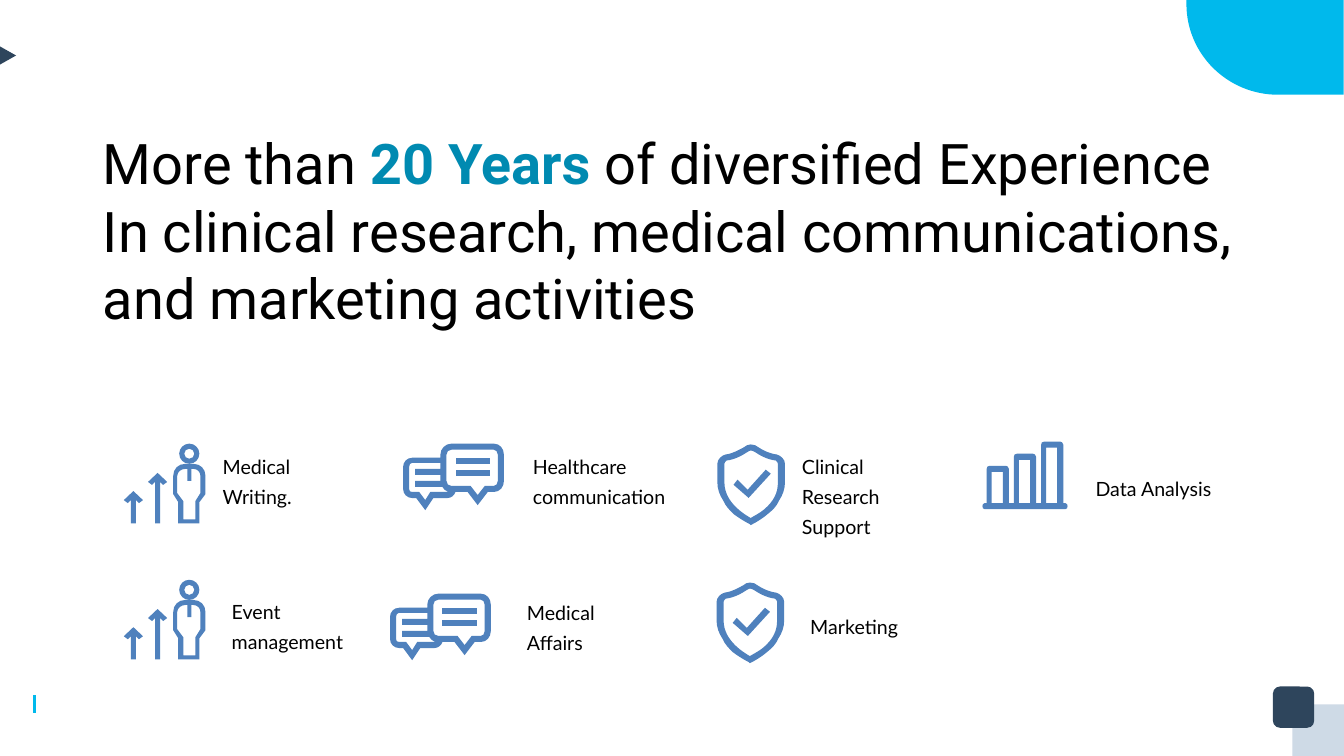
from dataclasses import dataclass

from lxml import etree
from pptx import Presentation
from pptx.dml.color import RGBColor
from pptx.enum.shapes import MSO_CONNECTOR, MSO_SHAPE
from pptx.enum.text import MSO_ANCHOR, MSO_AUTO_SIZE, PP_ALIGN
from pptx.oxml.ns import qn
from pptx.util import Cm, Pt

LEFT = PP_ALIGN.LEFT
TOP = MSO_ANCHOR.TOP
NO_AUTOFIT = MSO_AUTO_SIZE.NONE
STRAIGHT = MSO_CONNECTOR.STRAIGHT
RECTANGLE = MSO_SHAPE.RECTANGLE
ROUNDED = MSO_SHAPE.ROUNDED_RECTANGLE
TITLE_ONLY = 5
UNIT = Cm(2.54) // 100  # icon grid


@dataclass(frozen=True)
class Theme:
    text: RGBColor = RGBColor.from_string("000000")
    highlight: RGBColor = RGBColor.from_string("008AB1")
    cyan: RGBColor = RGBColor.from_string("00B9EC")
    navy: RGBColor = RGBColor.from_string("2E455C")
    pale: RGBColor = RGBColor.from_string("CEDAE6")
    icon: RGBColor = RGBColor.from_string("4F81BD")
    title_font: str = "Roboto"
    label_font: str = "Lato"
    title_size: Pt = Pt(40)
    label_size: Pt = Pt(14)
    label_spacing: Pt = Pt(21.5)


theme = Theme()
presentation = Presentation()
presentation.slide_width = Cm(33.87)
presentation.slide_height = Cm(19.05)
slide = presentation.slides.add_slide(presentation.slide_layouts[TITLE_ONLY])


def write_text(shape, paragraphs, *, font, size, spacing=None, highlight=None):
    """Fill a shape with paragraphs, each a list of runs; one run may be highlighted."""
    frame = shape.text_frame
    frame.word_wrap = True
    frame.auto_size = NO_AUTOFIT
    frame.vertical_anchor = TOP
    for index, runs in enumerate(paragraphs):
        paragraph = frame.add_paragraph() if index else frame.paragraphs[0]
        paragraph.alignment = LEFT
        if spacing:
            paragraph.line_spacing = spacing
        for text in runs:
            run = paragraph.add_run()
            run.text = text
            run.font.name = font
            run.font.size = size
            run.font.bold = text == highlight
            run.font.color.rgb = theme.highlight if text == highlight else theme.text


def draw_outline(contours, left, top, color):
    """Draw closed contours as one shape; a pair is a corner, six numbers are a Bézier curve."""
    builder = slide.shapes.build_freeform(*[value * UNIT for value in contours[0][0]])
    for index, contour in enumerate(contours):
        corners = [(node[-2] * UNIT, node[-1] * UNIT) for node in contour]
        if index:
            builder.move_to(*corners[0])
        builder.add_line_segments(corners[1:], close=True)
    shape = builder.convert_to_shape(Cm(left), Cm(top))

    nodes = [node for contour in contours for node in contour]
    min_x = min(node[-2] for node in nodes)
    min_y = min(node[-1] for node in nodes)
    drawn_nodes = [node for contour in contours for node in contour[1:]]
    for segment, node in zip(list(shape._element.iter(qn("a:lnTo"))), drawn_nodes):
        if len(node) == 6:
            segment.tag = qn("a:cubicBezTo")
            for position in (0, 1):
                control = etree.Element(qn("a:pt"))
                control.set("x", str(int((node[2 * position] - min_x) * UNIT)))
                control.set("y", str(int((node[2 * position + 1] - min_y) * UNIT)))
                segment.insert(position, control)
    shape.shadow.inherit = False
    shape.fill.solid()
    shape.fill.fore_color.rgb = color
    shape.line.fill.background()
    return shape


# Corner decorations
draw_outline([[(156, 0), (0, 0), (0, 4), (0, 54, 41, 94, 91, 94), (156, 94)]], 29.9, 0, theme.cyan)
draw_outline([[(0, 0), (0, 18), (16, 9)]], 0, 1.17, theme.navy)
for kind, left, top, side, color in (
    (RECTANGLE, 32.57, 17.75, 1.3, theme.pale),
    (ROUNDED, 32.08, 17.3, 1.04, theme.navy),
):
    square = slide.shapes.add_shape(kind, Cm(left), Cm(top), Cm(side), Cm(side))
    square.shadow.inherit = False
    square.fill.solid()
    square.fill.fore_color.rgb = color
    square.line.fill.background()
    if kind == ROUNDED:
        square.adjustments[0] = 0.17
footer_mark = slide.shapes.add_connector(STRAIGHT, Cm(0.87), Cm(17.52), Cm(0.87), Cm(17.97))
footer_mark.line.color.rgb = theme.cyan
footer_mark.line.width = Pt(1.75)
etree.SubElement(footer_mark._element.spPr, qn("a:effectLst"))

# Title
title = slide.shapes.title
title.left, title.top, title.width, title.height = Cm(2.34), Cm(3.12), Cm(29.21), Cm(5.38)
write_text(
    title,
    [
        ["More than ", "20 Years ", "of diversified Experience"],
        ["In clinical research, medical communications, and marketing activities"],
    ],
    font=theme.title_font, size=theme.title_size, highlight="20 Years ",
)

# Icons: each is a list of shapes, each shape a list of contours
person_body = [
    [(69, 20), (61, 20), (54, 20, 49, 25, 49, 32), (49, 50), (54, 58), (54, 79), (75, 79),
     (75, 58), (81, 50), (81, 32), (81, 25, 76, 20, 69, 20)],
    [(76, 49), (71, 57), (71, 75), (59, 75), (59, 57), (53, 49), (53, 32), (53, 28, 57, 25, 61, 25),
     (63, 25), (63, 37), (67, 37), (67, 25), (69, 25), (73, 25, 76, 28, 76, 32)],
]
person_head = []
for radius, bend in ((10, 5.5), (5, 2.75)):
    x, y = 65, 10
    person_head.append([
        (x, y - radius),
        (x + bend, y - radius, x + radius, y - bend, x + radius, y),
        (x + radius, y + bend, x + bend, y + radius, x, y + radius),
        (x - bend, y + radius, x - radius, y + bend, x - radius, y),
        (x - radius, y - bend, x - bend, y - radius, x, y - radius),
    ])
growth = [person_body, person_head]
for x, y in ((24, 29), (0, 47)):
    growth.append([[(x, y + 9), (x + 4, y + 12), (x + 7, y + 9), (x + 7, 79), (x + 12, 79),
                    (x + 12, y + 9), (x + 15, y + 12), (x + 19, y + 9), (x + 9.5, y)]])

bubbles = [
    [(90, 0), (48, 0), (42, 0, 37, 5, 37, 11), (37, 14), (9, 14), (4, 14, 0, 18, 0, 23),
     (0, 45), (0, 50, 4, 54, 9, 54), (13, 54), (22, 66), (30, 54), (44, 54),
     (48, 54, 51, 51, 52, 48), (64, 48), (74, 61), (84, 48), (90, 48),
     (96, 48, 100, 43, 100, 37), (100, 11), (100, 5, 96, 0, 90, 0)],
    [(94, 37), (94, 40, 92, 42, 90, 42), (81, 42), (74, 51), (67, 42), (48, 42),
     (45, 42, 43, 40, 43, 37), (43, 11), (43, 8, 45, 6, 48, 6), (90, 6), (92, 6, 94, 8, 94, 11)],
    [(27, 48), (22, 56), (16, 48), (9, 48), (7, 48, 6, 47, 6, 45), (6, 23), (6, 21, 7, 19, 9, 19),
     (37, 19), (37, 25), (12, 25), (12, 31), (37, 31), (37, 37), (12, 37), (12, 43), (39, 43),
     (40, 45, 42, 47, 45, 48)],
]
chat = [bubbles] + [[[(52, y), (86, y), (86, y + 6), (52, y + 6)]] for y in (14, 26)]

shield_frame = [
    [(59, 10), (51, 9, 44, 5, 41, 3), (39, 1, 36, 0, 33, 0), (31, 0, 28, 1, 26, 3),
     (22, 5, 16, 9, 8, 10), (4, 11, 0, 15, 0, 19), (0, 38), (0, 44, 2, 50, 6, 56),
     (8, 61, 12, 65, 16, 69), (24, 75, 32, 79, 32, 79), (33, 80), (35, 79),
     (35, 79, 43, 75, 50, 69), (55, 65, 59, 61, 61, 56), (65, 50, 67, 44, 67, 38),
     (67, 19), (67, 15, 63, 11, 59, 10)],
    [(60, 38), (60, 48, 56, 56, 47, 64), (41, 69, 36, 71, 33, 73), (28, 70, 7, 58, 7, 38),
     (7, 19), (7, 18, 8, 17, 9, 16), (18, 15, 26, 10, 29, 8), (31, 7, 32, 6, 33, 6),
     (35, 6, 36, 7, 38, 8), (41, 10, 49, 15, 58, 16), (59, 17, 60, 18, 60, 19)],
]
shield = [shield_frame, [[(30, 45), (20, 35), (16, 40), (31, 53), (53, 29), (48, 25)]]]

chart_edge = [(3, 67), (0, 67, 0, 61, 3, 61)]
chart_holes = []
for x, y in ((5, 24), (32, 12), (59, 0)):
    chart_edge += [(x, 61), (x, y + 3), (x, y + 1, x + 1, y, x + 3, y), (x + 19, y),
                   (x + 20, y, x + 22, y + 1, x + 22, y + 3), (x + 22, 61)]
    chart_holes.append([(x + 5, y + 6), (x + 16, y + 6), (x + 16, 61), (x + 5, 61)])
chart_edge += [(83, 61), (86, 61, 86, 67, 83, 67)]
bar_chart = [[chart_edge] + chart_holes]

# Services: icon and its place, label with its place, width and line count
services = [
    (growth, 3.12, 11.18, "Medical Writing.", 5.36, 11.18, 3.58, 2),
    (chat, 10.16, 11.18, "Healthcare communication", 13.18, 11.18, 4.04, 2),
    (shield, 18.08, 11.2, "Clinical Research Support", 19.96, 11.18, 3.58, 3),
    (bar_chart, 24.74, 11.13, "Data Analysis", 27.36, 11.73, 3.58, 1),
    (growth, 3.12, 14.61, "Event management", 5.59, 14.83, 3.58, 2),
    (chat, 9.83, 14.96, "Medical Affairs", 13.03, 14.86, 3.58, 2),
    (shield, 18.06, 14.68, "Marketing", 20.17, 15.21, 3.58, 1),
]
for icon, icon_left, icon_top, label, left, top, width, lines in services:
    parts = [draw_outline(contours, icon_left, icon_top, theme.icon) for contours in icon]
    if len(parts) > 1:
        slide.shapes.add_group_shape(parts)
    label_box = slide.shapes.add_textbox(Cm(left), Cm(top), Cm(width), Cm(0.25 + 0.76 * lines))
    write_text(label_box, [[label]], font=theme.label_font, size=theme.label_size,
               spacing=theme.label_spacing)

presentation.save("out.pptx")
